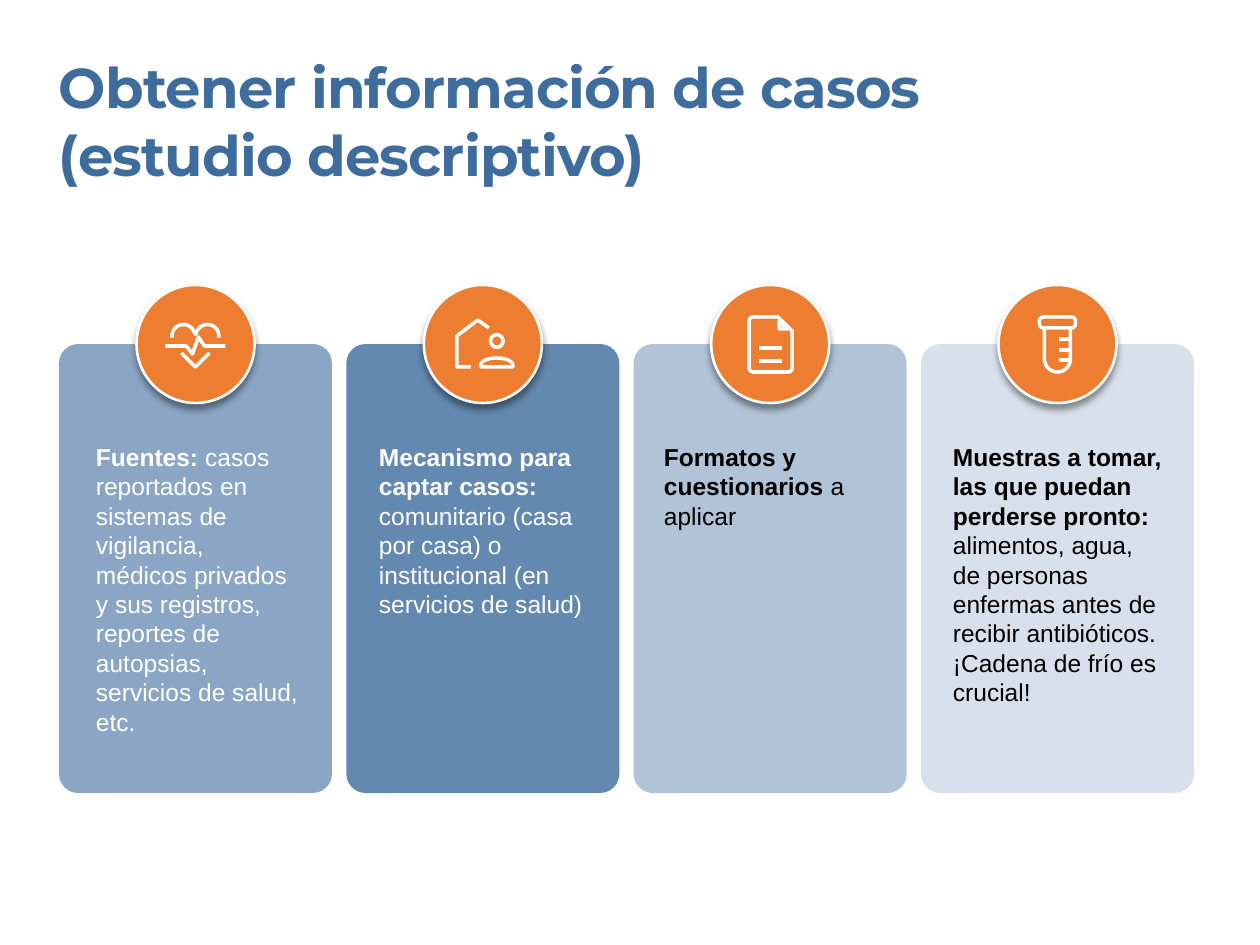
from dataclasses import dataclass
from math import cos, radians, sin

from lxml.etree import SubElement
from pptx import Presentation
from pptx.dml.color import RGBColor
from pptx.enum.shapes import MSO_SHAPE
from pptx.enum.text import MSO_AUTO_SIZE
from pptx.oxml.ns import qn
from pptx.util import Inches, Pt


@dataclass(frozen=True)
class Theme:
    blue: str = "3D6C9D"
    orange: str = "ED7D31"
    white: str = "FFFFFF"
    black: str = "000000"
    title_font: str = "Montserrat"
    body_font: str = "Arial"
    title_size: int = 32
    body_size: int = 14
    ring_width: float = 1.5
    icon_width: float = 2


THEME = Theme()
PX = Inches(1) / 126


def arc(center_x, center_y, radius_x, radius_y, start, end, steps=16):
    angles = [radians(start + (end - start) * step / steps) for step in range(steps + 1)]
    return [(center_x + radius_x * cos(a), center_y + radius_y * sin(a)) for a in angles]


def rounded(left, top, right, bottom, radius):
    corners = [(right - radius, bottom - radius), (left + radius, bottom - radius),
               (left + radius, top + radius), (right - radius, top + radius)]
    return [point for turn, (x, y) in enumerate(corners)
            for point in arc(x, y, radius, radius, 90 * turn, 90 * turn + 90, 6)]


HEART = [
    (arc(-12, -8, 11.5, 11.5, 172, 350) + arc(12, -8, 11.5, 11.5, 190, 368), False),
    ([(-14, 9), (0, 23), (14, 9)], False),
    ([(-30, 2), (-9, 2), (-3, 10), (3, -7), (9, 2), (30, 2)], False),
]
HOUSE = [
    ([(-12, 23), (-26, 23), (-26, -8), (-5, -24), (6, -16)], False),
    (arc(14, -3, 6.3, 6.3, 0, 360), True),
    ([(-2, 23)] + arc(14, 21, 16, 7, 180, 360) + [(30, 23)], True),
]
DOCUMENT = [
    (rounded(-21, -27, 22, 28, 4)[:21] + [(8, -27), (22, -13)], True),
    ([(9, -23), (9, -15), (17, -15)], True),
    ([(-11, 4), (12, 4)], False),
    ([(-11, 17), (12, 17)], False),
]
TUBE = [
    (rounded(-18, -27, 18, -16, 4), True),
    ([(13, -16)] + arc(0, 15, 13, 13, 0, 180) + [(-13, -16)], False),
] + [([(2, y), (13, y)], False) for y in (-5, 6, 16)]

TITLE = "Obtener información de casos (estudio descriptivo)"
CARDS = [
    ("Fuentes: ",
     "casos reportados en sistemas de vigilancia, médicos privados y sus registros, "
     "reportes de autopsias, servicios de salud, etc.",
     (96, 204, 297), 60, THEME.white, HEART),
    ("Mecanismo para captar casos: ",
     "comunitario (casa por casa) o institucional (en servicios de salud)",
     (379, 214, 178), 80, THEME.white, HOUSE),
    ("Formatos y cuestionarios ", "a aplicar",
     (664, 214, 89), 40, THEME.black, DOCUMENT),
    ("Muestras a tomar, las que puedan perderse pronto: ",
     "alimentos, agua, de personas enfermas antes de recibir antibióticos. "
     "¡Cadena de frío es crucial!",
     (953, 212, 267), 20, THEME.black, TUBE),
]

TITLE_BOX = (59, 53, 1092, 136)
CARDS_LEFT, CARDS_TOP, CARDS_WIDTH = 59, 344, 1135
CARD_WIDTH, CARD_HEIGHT = 273, 449
CIRCLE = 118
TEXT_TOP = 442
PITCH = (CARDS_WIDTH - CARD_WIDTH) / (len(CARDS) - 1)


def px(value):
    return round(value * PX)


def color(value):
    return RGBColor.from_string(value)


def add_text(slide, box, parts, font, size, text_color):
    text_frame = slide.shapes.add_textbox(*map(px, box)).text_frame
    text_frame.word_wrap = True
    text_frame.auto_size = MSO_AUTO_SIZE.SHAPE_TO_FIT_TEXT
    text_frame.margin_left = text_frame.margin_right = 0
    text_frame.margin_top = text_frame.margin_bottom = 0
    paragraph = text_frame.paragraphs[0]
    for index, part in enumerate(parts):
        run = paragraph.add_run()
        run.text = part
        run.font.name = font
        run.font.size = Pt(size)
        run.font.bold = index == 0
        run.font.color.rgb = color(text_color)
    return paragraph


def add_card(slide, left, opacity):
    card = slide.shapes.add_shape(
        MSO_SHAPE.ROUNDED_RECTANGLE, px(left), px(CARDS_TOP), px(CARD_WIDTH), px(CARD_HEIGHT))
    card.adjustments[0] = 0.07
    card.shadow.inherit = False
    card.line.fill.background()
    card.fill.solid()
    card.fill.fore_color.rgb = color(THEME.blue)
    fill_color = card.fill._xPr.find(qn("a:solidFill")).find(qn("a:srgbClr"))
    SubElement(fill_color, qn("a:alpha"), val=str(opacity * 1000))


def add_circle(slide, center_x):
    circle = slide.shapes.add_shape(
        MSO_SHAPE.OVAL, px(center_x - CIRCLE / 2), px(CARDS_TOP - CIRCLE / 2),
        px(CIRCLE), px(CIRCLE))
    circle.fill.solid()
    circle.fill.fore_color.rgb = color(THEME.orange)
    circle.line.color.rgb = color(THEME.white)
    circle.line.width = Pt(THEME.ring_width)
    circle.shadow.inherit = False
    effects = circle._element.spPr.find(qn("a:effectLst"))
    shadow = SubElement(effects, qn("a:outerShdw"), blurRad=str(Pt(4)), dist=str(Pt(3)),
                        dir="5400000", algn="t", rotWithShape="0")
    shadow_color = SubElement(shadow, qn("a:srgbClr"), val=THEME.black)
    SubElement(shadow_color, qn("a:alpha"), val="40000")


def add_icon(slide, center_x, strokes):
    placed = [([(px(center_x + x), px(CARDS_TOP + y)) for x, y in points], closed)
              for points, closed in strokes]
    builder = slide.shapes.build_freeform(*placed[0][0][0], scale=1.0)
    for index, (points, closed) in enumerate(placed):
        if index:
            builder.move_to(*points[0])
        builder.add_line_segments(points[1:], close=closed)
    icon = builder.convert_to_shape()
    icon.shadow.inherit = False
    icon.fill.background()
    icon.line.color.rgb = color(THEME.white)
    icon.line.width = Pt(THEME.icon_width)


def main():
    presentation = Presentation()
    presentation.slide_width, presentation.slide_height = px(1260), px(945)
    slide = presentation.slides.add_slide(presentation.slide_layouts[6])

    title = add_text(slide, TITLE_BOX, [TITLE], THEME.title_font, THEME.title_size, THEME.blue)
    title.runs[0].font._element.set("spc", "-50")

    lefts = [CARDS_LEFT + index * PITCH for index in range(len(CARDS))]
    for left, card in zip(lefts, CARDS):
        heading, body, (text_left, width, height), opacity, text_color, strokes = card
        center_x = left + CARD_WIDTH / 2
        add_card(slide, left, opacity)
        add_circle(slide, center_x)
        add_icon(slide, center_x, strokes)
        add_text(slide, (text_left, TEXT_TOP, width, height), [heading, body],
                 THEME.body_font, THEME.body_size, text_color)

    presentation.save("out.pptx")


if __name__ == "__main__":
    main()
